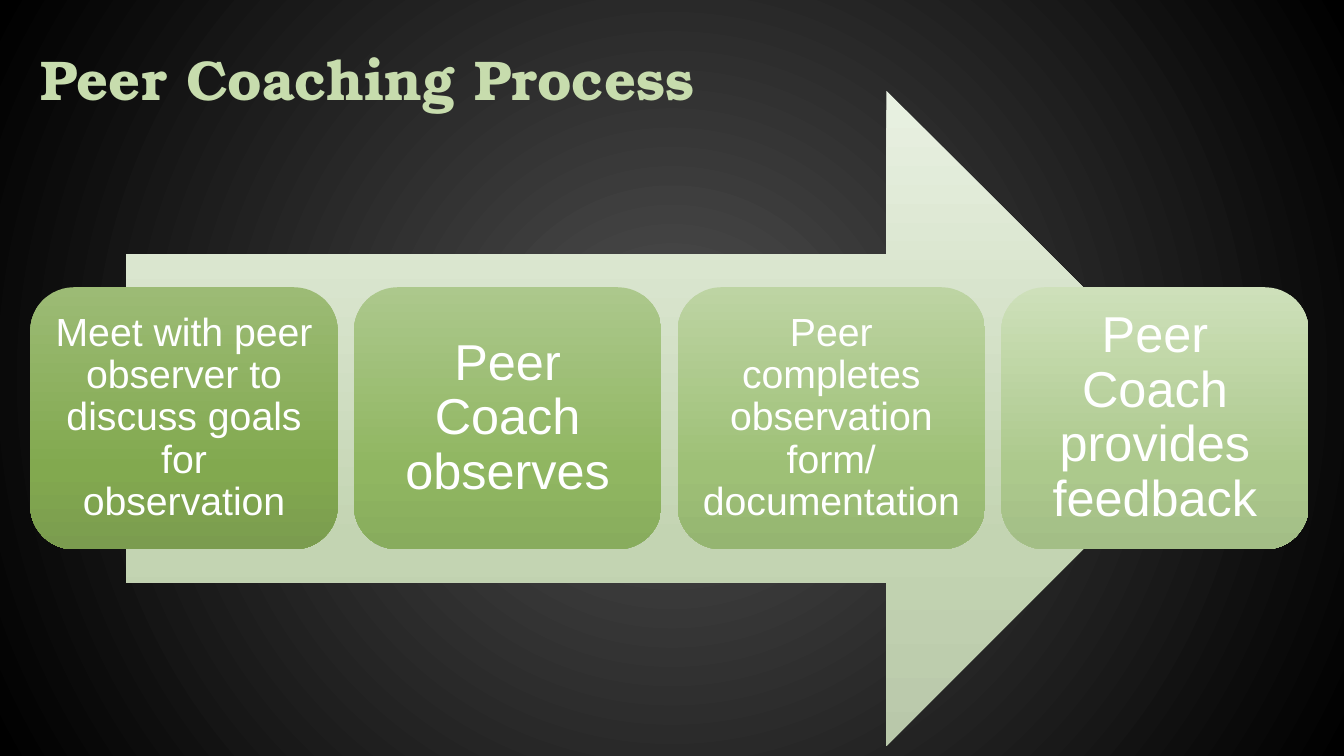
from lxml.etree import SubElement
from pptx import Presentation
from pptx.dml.color import RGBColor
from pptx.enum.shapes import MSO_SHAPE
from pptx.enum.text import MSO_ANCHOR, PP_ALIGN
from pptx.oxml.ns import qn
from pptx.util import Inches, Pt


def color(value):
    return RGBColor.from_string(value)


class ProcessSlide:
    title_font = "TeX Gyre Bonum"
    body_font = "Arial"
    title_color = "C7DCAD"
    body_color = "FFFFFF"
    stop_positions = (0, 69, 100)

    def __init__(self, deck):
        self.slide = deck.slides.add_slide(deck.slide_layouts[6])

    def gradient(self, owner, fill, stops):
        fill.gradient()
        gradient = next(owner.iter(qn("a:gradFill")))
        for child in list(gradient):
            gradient.remove(child)
        stop_list = SubElement(gradient, qn("a:gsLst"))
        for position, value in stops:
            stop = SubElement(stop_list, qn("a:gs"), pos=str(position * 1000))
            SubElement(stop, qn("a:srgbClr"), val=value)
        return gradient

    def background(self, center, edge):
        stops = ((0, center), (100, edge))
        gradient = self.gradient(self.slide.element, self.slide.background.fill, stops)
        circle = SubElement(gradient, qn("a:path"), path="circle")
        SubElement(circle, qn("a:fillToRect"), l="50000", t="50000", r="50000", b="50000")

    def set_text(self, frame, text, font, size, value, bold=False):
        frame.word_wrap = True
        frame.vertical_anchor = MSO_ANCHOR.MIDDLE
        frame.text = text
        paragraph = frame.paragraphs[0]
        paragraph.line_spacing = 0.9
        run_font = paragraph.runs[0].font
        run_font.name = font
        run_font.size = Pt(size)
        run_font.bold = bold
        run_font.color.rgb = color(value)
        return paragraph

    def title(self, text, left, top, width, height):
        heading = self.slide.shapes.add_textbox(
            Inches(left), Inches(top), Inches(width), Inches(height))
        self.set_text(heading.text_frame, text, self.title_font, 40, self.title_color, True)

    def block(self, preset, left, top, width, height, colors):
        block = self.slide.shapes.add_shape(
            preset, Inches(left), Inches(top), Inches(width), Inches(height))
        block.shadow.inherit = False
        block.line.fill.background()
        gradient = self.gradient(block.element.spPr, block.fill,
                                 zip(self.stop_positions, colors))
        SubElement(gradient, qn("a:lin"), ang="5400000", scaled="0")
        return block

    def step(self, text, size, left, top, width, height, inset, colors):
        card = self.block(MSO_SHAPE.ROUNDED_RECTANGLE, left, top, width, height, colors)
        frame = card.text_frame
        frame.margin_left = frame.margin_right = Inches(inset)
        frame.margin_top = frame.margin_bottom = Inches(inset)
        paragraph = self.set_text(frame, text, self.body_font, size, self.body_color)
        paragraph.alignment = PP_ALIGN.CENTER


STEPS = (
    ("Meet with peer observer to discuss goals for observation", 28, 0.12,
     ("9CBB75", "82A94F", "7B9C4F")),
    ("Peer Coach observes", 36, 0.15, ("ACC88C", "90B661", "88AC5D")),
    ("Peer completes observation form/ documentation", 28, 0.12,
     ("BDD4A3", "9EC076", "95B571")),
    ("Peer Coach provides feedback", 36, 0.15, ("CEE0BA", "ACC98C", "A3BE86")),
)
STEP_LEFT, STEP_PITCH = 0.3, 3.21


def main():
    deck = Presentation()
    deck.slide_width, deck.slide_height = Inches(13.33), Inches(7.5)
    process = ProcessSlide(deck)
    process.background("505050", "000000")
    process.title("Peer Coaching Process", 0.3, 0.38, 9.31, 0.88)
    process.block(MSO_SHAPE.RIGHT_ARROW, 1.25, 0.9, 10.79, 6.5,
                  ("E9F1E2", "C3D4B2", "B9C8AA"))
    for index, (text, size, inset, colors) in enumerate(STEPS):
        process.step(text, size, STEP_LEFT + index * STEP_PITCH, 2.85, 3.05, 2.6,
                     inset, colors)
    deck.save("out.pptx")


if __name__ == "__main__":
    main()
